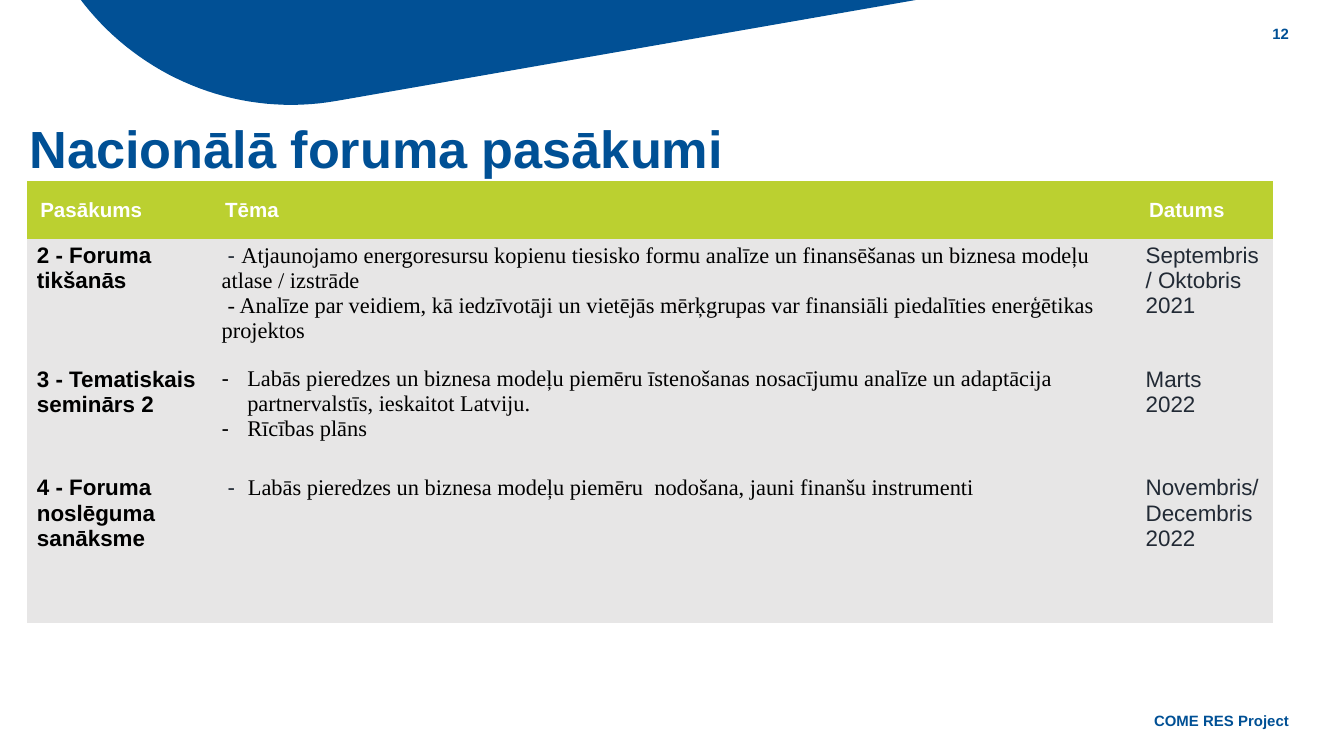
from lxml import etree
from pptx import Presentation
from pptx.dml.color import RGBColor
from pptx.enum.text import MSO_ANCHOR, MSO_AUTO_SIZE, PP_ALIGN
from pptx.oxml.ns import qn
from pptx.util import Pt

LEFT, RIGHT = PP_ALIGN.LEFT, PP_ALIGN.RIGHT
TOP, MIDDLE, BOTTOM = MSO_ANCHOR.TOP, MSO_ANCHOR.MIDDLE, MSO_ANCHOR.BOTTOM
NO_FIT = MSO_AUTO_SIZE.NONE

PX = 4572
TITLE_ONLY = 5
PLAIN_TABLE = "{2D5ABB26-0587-4C30-8999-92F81FD0307C}"
SANS, SERIF = "Arial", "Times New Roman"
COLORS = {
    "wave": "015095", "blue": "005095", "lime": "BBD030", "grey": "E7E6E6",
    "slate": "222A35", "black": "000000", "white": "FFFFFF",
}

COLUMNS = [275, 1375, 204]
ROWS = [85, 184, 162, 227]
HEADINGS = ["Pasākums", "Tēma", "Datums"]
EVENTS = [
    {
        "name": "2 - Foruma tikšanās",
        "topics": [
            [("- ", SANS, "slate"),
             ("Atjaunojamo energoresursu kopienu tiesisko formu analīze un finansēšanas "
              "un biznesa modeļu atlase / izstrāde", SERIF, "black")],
            [("- Analīze par veidiem, kā iedzīvotāji un vietējās mērķgrupas var finansiāli "
              "piedalīties enerģētikas projektos", SERIF, "black")],
        ],
        "margin": 0, "indent": 9, "bullet": None,
        "dates": ["Septembris/ Oktobris", "2021"],
    },
    {
        "name": "3 - Tematiskais seminārs 2",
        "topics": [
            [("Labās pieredzes un biznesa modeļu piemēru īstenošanas nosacījumu analīze "
              "un adaptācija partnervalstīs, ieskaitot Latviju.", SERIF, "black")],
            [("Rīcības plāns", SERIF, "black")],
        ],
        "margin": 38, "indent": -38, "bullet": "black",
        "dates": ["Marts", "2022"],
    },
    {
        "name": "4 - Foruma noslēguma sanāksme",
        "topics": [
            [("-\t", SANS, "slate"),
             ("Labās pieredzes un biznesa modeļu piemēru  nodošana, jauni finanšu instrumenti",
              SERIF, "black")],
        ],
        "margin": 39, "indent": -30, "bullet": None,
        "dates": ["Novembris/ Decembris 2022"],
    },
]


def rgb(name):
    """Return the named colour."""
    return RGBColor.from_string(COLORS[name])


def add_span(para, text, font=SANS, size=12, color="black", bold=False):
    """Append formatted text to a paragraph."""
    span = para.add_run()
    span.text = text
    span.font.name, span.font.size, span.font.bold = font, Pt(size), bold
    span.font.color.rgb = rgb(color)


def paragraphs(frame, count):
    """Yield the given number of paragraphs, starting with the first one."""
    for index in range(count):
        yield frame.add_paragraph() if index else frame.paragraphs[0]


def set_indent(para, margin, indent, bullet):
    """Set the paragraph indents and an optional dash bullet of the named colour."""
    props = para._p.get_or_add_pPr()
    props.set("marL", str(margin * PX))
    props.set("indent", str(indent * PX))
    if bullet:
        tint = etree.SubElement(props, qn("a:buClr"))
        etree.SubElement(tint, qn("a:srgbClr")).set("val", COLORS[bullet])
        etree.SubElement(props, qn("a:buFont")).set("typeface", SANS)
        etree.SubElement(props, qn("a:buChar")).set("char", "-")


def bezier(start, first, second, end, steps=48):
    """Return points along a cubic curve, without its start."""
    points = []
    for step in range(1, steps + 1):
        t = step / steps
        weights = ((1 - t) ** 3, 3 * t * (1 - t) ** 2, 3 * t * t * (1 - t), t ** 3)
        points.append(tuple(
            sum(w * p[axis] for w, p in zip(weights, (start, first, second, end)))
            for axis in (0, 1)))
    return points


def add_wave(page, left, top):
    """Draw the rounded blue shape that hangs from the top edge."""
    outline = [(0, 0), (1938, 0), (1938, 748), (572, 986)]
    outline += bezier((572, 986), (358, 1024), (154, 880), (116, 666))
    points = [(round((left + x) * PX), round((top + y) * PX)) for x, y in outline]
    builder = page.shapes.build_freeform(*points[0])
    builder.add_line_segments(points[1:], close=True)
    wave = builder.convert_to_shape()
    wave.shadow.inherit = False
    wave.fill.solid()
    wave.fill.fore_color.rgb = rgb("wave")
    wave.line.fill.background()


def add_label(page, text, left, top, width, height):
    """Add a small right-aligned label."""
    box = page.shapes.add_textbox(left * PX, top * PX, width * PX, height * PX)
    frame = box.text_frame
    frame.word_wrap = True
    frame.vertical_anchor = MIDDLE
    para = frame.paragraphs[0]
    para.alignment = RIGHT
    add_span(para, text, size=8, color="blue", bold=True)


def place_title(page, text, left, top, width, height):
    """Move the title placeholder and fill it."""
    title = page.shapes.title
    title.left, title.top = left * PX, top * PX
    title.width, title.height = width * PX, height * PX
    frame = title.text_frame
    frame.auto_size, frame.word_wrap = NO_FIT, True
    frame.vertical_anchor = BOTTOM
    frame.margin_top = frame.margin_bottom = 0
    para = frame.paragraphs[0]
    para.alignment = LEFT
    add_span(para, text, size=28, color="blue", bold=True)


def format_cell(cell, fill, anchor, side, edge):
    """Set the fill, anchor and margins of a cell and return its text frame."""
    cell.fill.solid()
    cell.fill.fore_color.rgb = rgb(fill)
    cell.vertical_anchor = anchor
    cell.margin_left = cell.margin_right = side * PX
    cell.margin_top = cell.margin_bottom = edge * PX
    return cell.text_frame


def add_events(page, left, top):
    """Add the table of forum events."""
    holder = page.shapes.add_table(
        len(ROWS), len(COLUMNS), left * PX, top * PX, sum(COLUMNS) * PX, sum(ROWS) * PX)
    holder.element.find(".//" + qn("a:tableStyleId")).text = PLAIN_TABLE
    table = holder.table
    table.first_row = table.horz_banding = False
    for column, width in zip(table.columns, COLUMNS):
        column.width = width * PX
    for row, height in zip(table.rows, ROWS):
        row.height = height * PX
    for cell, heading in zip(table.rows[0].cells, HEADINGS):
        frame = format_cell(cell, "lime", MIDDLE, 20, 10)
        add_span(frame.paragraphs[0], heading, size=11, color="white", bold=True)
    for index, event in enumerate(EVENTS, 1):
        name, topic, date = (
            format_cell(cell, "grey", TOP, 15, 7) for cell in table.rows[index].cells)
        add_span(name.paragraphs[0], event["name"], bold=True)
        for para, spans in zip(paragraphs(topic, len(event["topics"])), event["topics"]):
            set_indent(para, event["margin"], event["indent"], event["bullet"])
            for text, font, color in spans:
                add_span(para, text, font=font, color=color)
        for para, text in zip(paragraphs(date, len(event["dates"])), event["dates"]):
            add_span(para, text, color="slate")


def main():
    """Build the slide and save it."""
    deck = Presentation()
    deck.slide_width, deck.slide_height = 2000 * PX, 1125 * PX
    page = deck.slides.add_slide(deck.slide_layouts[TITLE_ONLY])
    add_wave(page, -70, -836)
    add_label(page, "COME RES Project", 858, 1043, 1080, 60)
    add_label(page, "12", 1472, 20, 466, 60)
    add_events(page, 40, 270)
    place_title(page, "Nacionālā foruma pasākumi", 24, 161, 1800, 106)
    deck.save("out.pptx")


if __name__ == "__main__":
    main()
